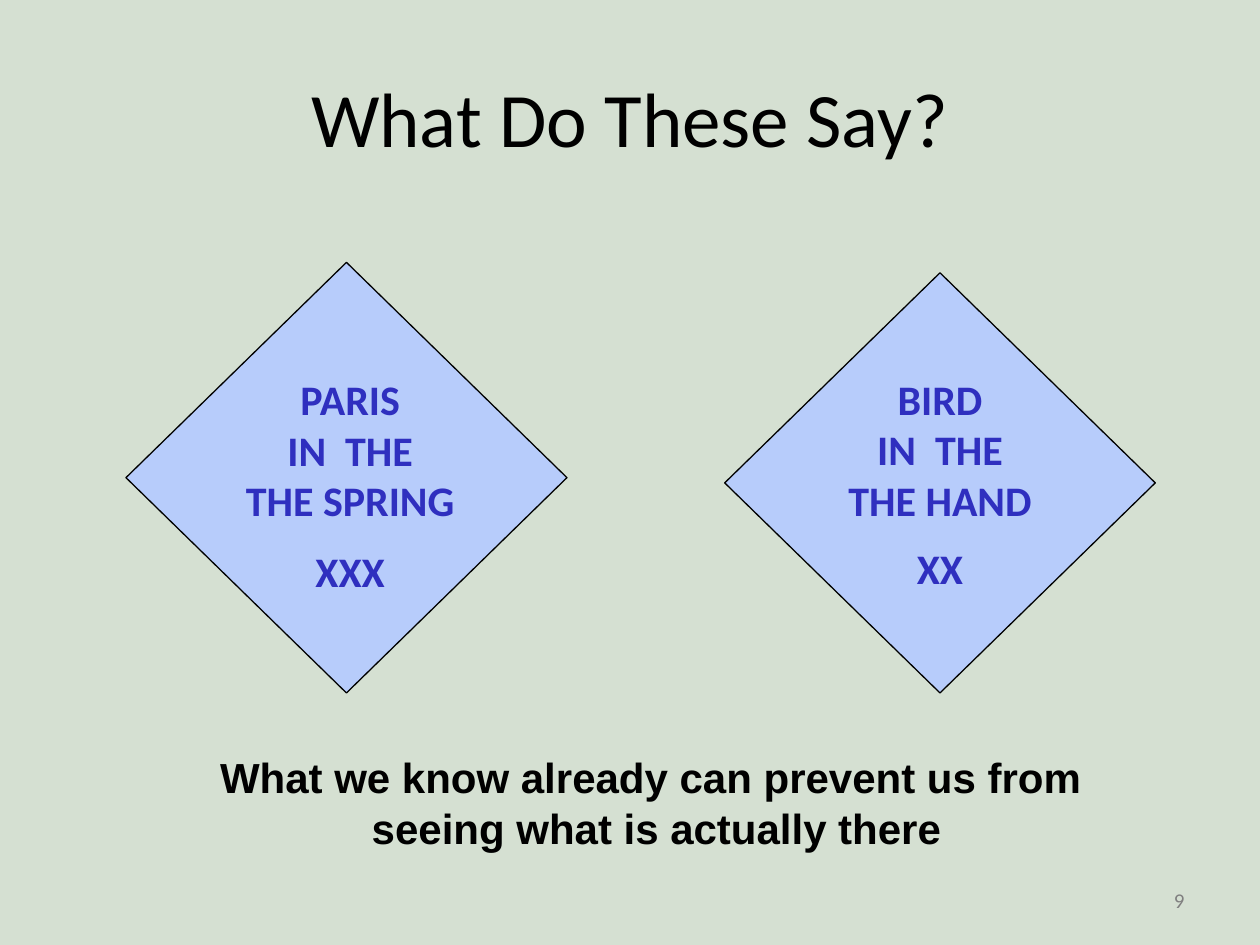
from dataclasses import dataclass

from pptx import Presentation
from pptx.dml.color import RGBColor
from pptx.enum.shapes import MSO_SHAPE as Shape
from pptx.enum.text import MSO_ANCHOR as Anchor, PP_ALIGN as Align
from pptx.shapes.autoshape import Shape as AutoShape
from pptx.slide import Slide
from pptx.util import Cm, Pt


@dataclass(frozen=True)
class Theme:
    background: str = "D5E0D2"
    sign_fill: str = "B7CCFB"
    sign_text: str = "2F2FBF"
    ink: str = "000000"
    muted: str = "808080"
    body_font: str = "Calibri"
    caption_font: str = "Arial"
    title_size: int = 44
    text_size: int = 24
    number_size: int = 12
    outline: float = 0.75


@dataclass(frozen=True)
class Area:
    left: float
    top: float
    width: float
    height: float

    def lengths(self) -> tuple[Cm, Cm, Cm, Cm]:
        return Cm(self.left), Cm(self.top), Cm(self.width), Cm(self.height)


@dataclass(frozen=True)
class Style:
    size: int
    color: str
    font: str
    bold: bool = False
    align: Align = Align.CENTER
    anchor: Anchor = Anchor.MIDDLE
    wrap: bool = True
    last_gap: float = 0


THEME = Theme()


def write(box: AutoShape, lines: list[str], style: Style) -> None:
    frame = box.text_frame
    frame.word_wrap = style.wrap
    frame.vertical_anchor = style.anchor
    frame.text = "\n".join(lines)
    for para in frame.paragraphs:
        para.alignment = style.align
        para.font.size = Pt(style.size)
        para.font.name = style.font
        para.font.bold = style.bold
        para.font.color.rgb = RGBColor.from_string(style.color)
    if style.last_gap:
        frame.paragraphs[-1].space_before = Pt(style.last_gap)


def add_text(slide: Slide, area: Area, lines: list[str], style: Style) -> None:
    write(slide.shapes.add_textbox(*area.lengths()), lines, style)


def add_sign(slide: Slide, area: Area) -> AutoShape:
    sign = slide.shapes.add_shape(Shape.FLOWCHART_DECISION, *area.lengths())
    sign.shadow.inherit = False
    sign.fill.solid()
    sign.fill.fore_color.rgb = RGBColor.from_string(THEME.sign_fill)
    sign.line.color.rgb = RGBColor.from_string(THEME.ink)
    sign.line.width = Pt(THEME.outline)
    return sign


def sign_style(anchor: Anchor, gap: float) -> Style:
    return Style(THEME.text_size, THEME.sign_text, THEME.body_font, bold=True,
                 anchor=anchor, wrap=False, last_gap=gap)


def main() -> None:
    """Build the slide on how expectation hides repeated words."""
    deck = Presentation()
    deck.slide_width, deck.slide_height = Cm(25.4), Cm(19.05)
    slide = deck.slides.add_slide(deck.slide_layouts[6])
    slide.background.fill.solid()
    slide.background.fill.fore_color.rgb = RGBColor.from_string(THEME.background)

    add_text(slide, Area(18.2, 17.65, 5.93, 1.01), ["9"],
             Style(THEME.number_size, THEME.muted, THEME.body_font, align=Align.RIGHT))
    add_text(slide, Area(1.27, 0.76, 22.86, 3.18), ["What Do These Say?"],
             Style(THEME.title_size, THEME.ink, THEME.body_font))

    add_sign(slide, Area(2.54, 5.29, 8.89, 8.68))
    add_text(slide, Area(4.2, 7.41, 5.72, 4.8),
             ["PARIS", "IN  THE", "THE SPRING", "XXX"], sign_style(Anchor.TOP, 12))
    bird_sign = add_sign(slide, Area(14.61, 5.5, 8.68, 8.47))
    write(bird_sign, ["BIRD", "IN  THE", "THE HAND", "XX"], sign_style(Anchor.MIDDLE, 10))

    add_text(slide, Area(3.86, 15.03, 18.75, 2.31),
             ["What we know already can prevent us from ", "seeing what is actually there"],
             Style(THEME.text_size, THEME.ink, THEME.caption_font, bold=True,
                   anchor=Anchor.TOP, wrap=False))
    deck.save("out.pptx")


if __name__ == "__main__":
    main()
